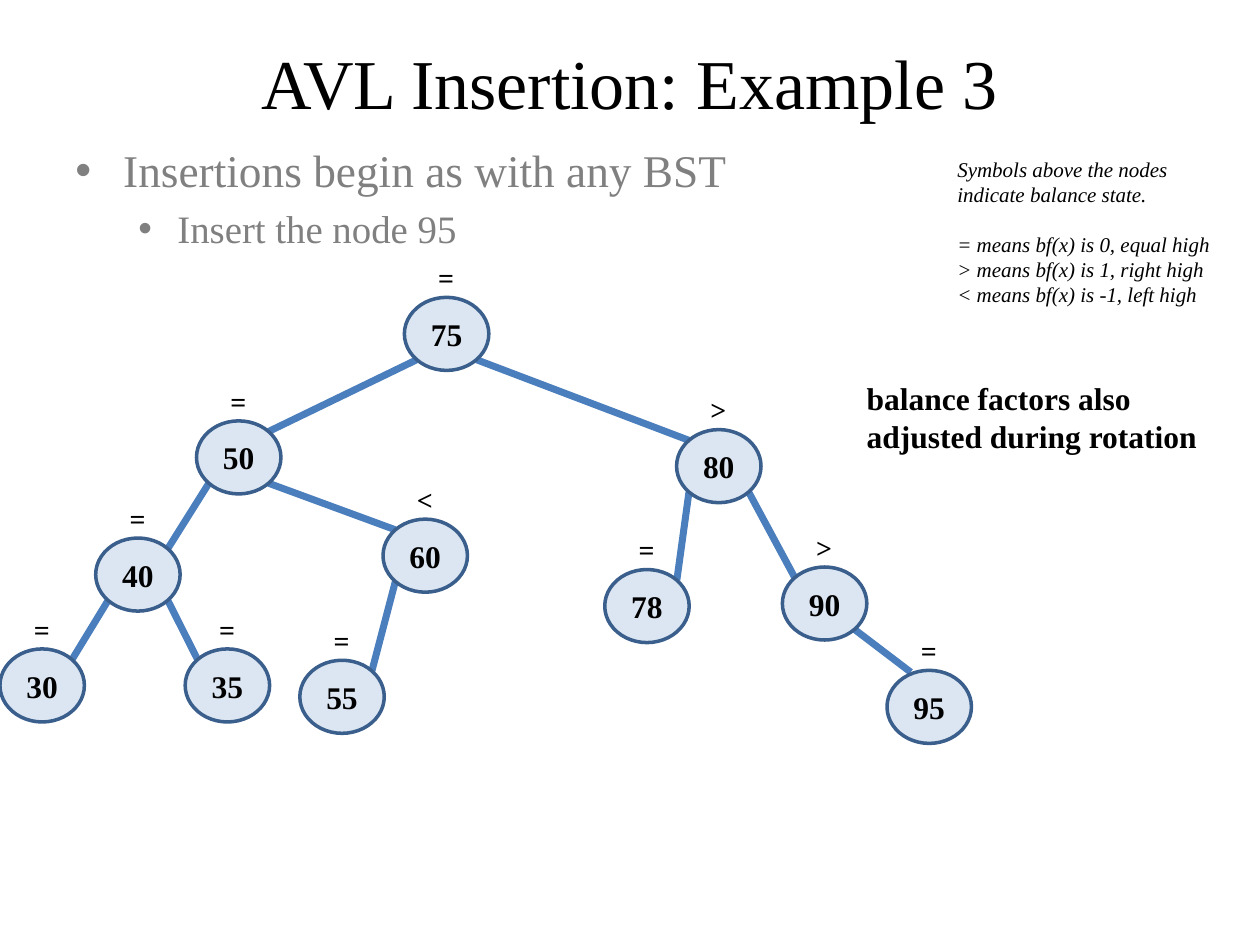
from lxml.etree import SubElement
from pptx import Presentation
from pptx.dml.color import RGBColor
from pptx.enum.shapes import MSO_CONNECTOR, MSO_SHAPE
from pptx.enum.text import MSO_ANCHOR, MSO_AUTO_SIZE, PP_ALIGN
from pptx.oxml.ns import qn
from pptx.util import Inches, Pt

# Grid of 100 columns by 75 rows, each cell a tenth of an inch
CELL = Inches(0.1)
FONT = "Times New Roman"
BLACK, GREY = "000000", "808080"
NODE_FILL, NODE_EDGE, BRANCH = "DCE6F2", "3A5F8C", "4B7EBC"

NODE_W, NODE_H = 6.7, 5.8
CORNER = (1 - 0.5 ** 0.5) / 2  # inset of an ellipse's 45-degree point

# key: (balance symbol, left column, top row)
NODES = {
    "75": ("=", 32.1, 23.6),
    "50": ("=", 15.6, 33.4),
    "80": (">", 53.7, 34.1),
    "40": ("=", 7.6, 42.7),
    "60": ("<", 30.4, 41.2),
    "78": ("=", 48, 45.2),
    "90": (">", 62.1, 45),
    "30": ("=", 0, 51.5),
    "35": ("=", 14.7, 51.5),
    "55": ("=", 23.8, 52.4),
    "95": ("=", 70.4, 53.2),
}
# parent: children
TREE = {
    "75": ["50", "80"],
    "50": ["40", "60"],
    "40": ["30", "35"],
    "60": ["55"],
    "80": ["78", "90"],
    "90": ["95"],
}
NUDGES = {"95": (0.9, -0.7)}  # branch ends that sit off the 45-degree point


def color(value):
    return RGBColor.from_string(value)


def grid(*cells):
    return [round(cell * CELL) for cell in cells]


def add_run(paragraph, text, size, ink=BLACK, bold=False, italic=False):
    run = paragraph.add_run()
    run.text = text
    font = run.font
    font.name, font.size, font.bold, font.italic = FONT, Pt(size), bold, italic
    font.color.rgb = color(ink)


def add_text(slide, box, lines, size, wrap=False, **style):
    frame = slide.shapes.add_textbox(*grid(*box)).text_frame
    frame.word_wrap = wrap
    frame.auto_size = MSO_AUTO_SIZE.NONE if wrap else MSO_AUTO_SIZE.SHAPE_TO_FIT_TEXT
    for index, line in enumerate(lines):
        paragraph = frame.add_paragraph() if index else frame.paragraphs[0]
        add_run(paragraph, line, size, **style)
    return frame


def add_title(slide, box):
    frame = add_text(slide, box, ["AVL Insertion: Example 3"], 40, wrap=True)
    frame.vertical_anchor = MSO_ANCHOR.MIDDLE
    frame.paragraphs[0].alignment = PP_ALIGN.CENTER


def add_steps(slide, box):
    frame = add_text(slide, box, [], 0, wrap=True)
    steps = [
        ("Insertions begin as with any BST", 25.9, 0.38, 0.38),
        ("Insert the node 95", 22.2, 0.81, 0.31),
    ]
    for level, (text, size, margin, hanging) in enumerate(steps):
        paragraph = frame.add_paragraph() if level else frame.paragraphs[0]
        paragraph.level = level
        paragraph.space_before = Pt(size * 0.2)
        add_run(paragraph, text, size, GREY)
        props = paragraph._p.get_or_add_pPr()
        props.set("marL", str(Inches(margin)))
        props.set("indent", str(-Inches(hanging)))
        SubElement(props, qn("a:buFont")).set("typeface", "Arial")
        SubElement(props, qn("a:buChar")).set("char", "•")


def add_legend(slide, box):
    frame = add_text(slide, box, [
        "Symbols above the nodes",
        "indicate balance state.",
        "= means bf(x) is 0, equal high",
        "> means bf(x) is 1, right high",
        "< means bf(x) is -1, left high",
    ], 12, italic=True)
    frame.paragraphs[2].space_before = Pt(14)


def add_remark(slide, box):
    add_text(slide, box, ["balance factors also", "adjusted during rotation"],
             18, bold=True)


def node_corner(left, top, right_side, bottom_side):
    across = 1 - CORNER if right_side else CORNER
    down = 1 - CORNER if bottom_side else CORNER
    return left + NODE_W * across, top + NODE_H * down


def add_branch(slide, parent, child):
    parent_at, child_at = NODES[parent][1:], NODES[child][1:]
    goes_right = child_at[0] > parent_at[0]
    start = node_corner(*parent_at, goes_right, True)
    end_x, end_y = node_corner(*child_at, not goes_right, False)
    shift_x, shift_y = NUDGES.get(child, (0, 0))
    branch = slide.shapes.add_connector(
        MSO_CONNECTOR.STRAIGHT, *grid(*start, end_x + shift_x, end_y + shift_y))
    branch.line.color.rgb = color(BRANCH)
    branch.line.width = Pt(4)
    SubElement(branch._element.spPr, qn("a:effectLst"))


def add_node(slide, key, symbol, left, top):
    node = slide.shapes.add_shape(
        MSO_SHAPE.OVAL, *grid(left, top, NODE_W, NODE_H))
    node.shadow.inherit = False
    node.fill.solid()
    node.fill.fore_color.rgb = color(NODE_FILL)
    node.line.color.rgb = color(NODE_EDGE)
    node.line.width = Pt(2)
    frame = node.text_frame
    frame.vertical_anchor = MSO_ANCHOR.MIDDLE
    frame.paragraphs[0].alignment = PP_ALIGN.CENTER
    add_run(frame.paragraphs[0], key, 18, bold=True)
    # Balance symbol above the node
    add_text(slide, (left + 1.7, top - 3.4, 3.3, 3.7), [symbol], 16, bold=True)


def add_tree(slide):
    for parent, children in TREE.items():
        for child in children:
            add_branch(slide, parent, child)
    for key, (symbol, left, top) in NODES.items():
        add_node(slide, key, symbol, left, top)


def main():
    deck = Presentation()
    deck.slide_width, deck.slide_height = grid(100, 75)
    slide = deck.slides.add_slide(deck.slide_layouts[6])
    add_title(slide, (5, 3, 90, 7))
    add_steps(slide, (5, 10.8, 90, 9.4))
    add_legend(slide, (75, 11.9, 22.3, 13.1))
    add_tree(slide)
    add_remark(slide, (67.8, 29.6, 28.5, 7.1))
    deck.save("out.pptx")


if __name__ == "__main__":
    main()
